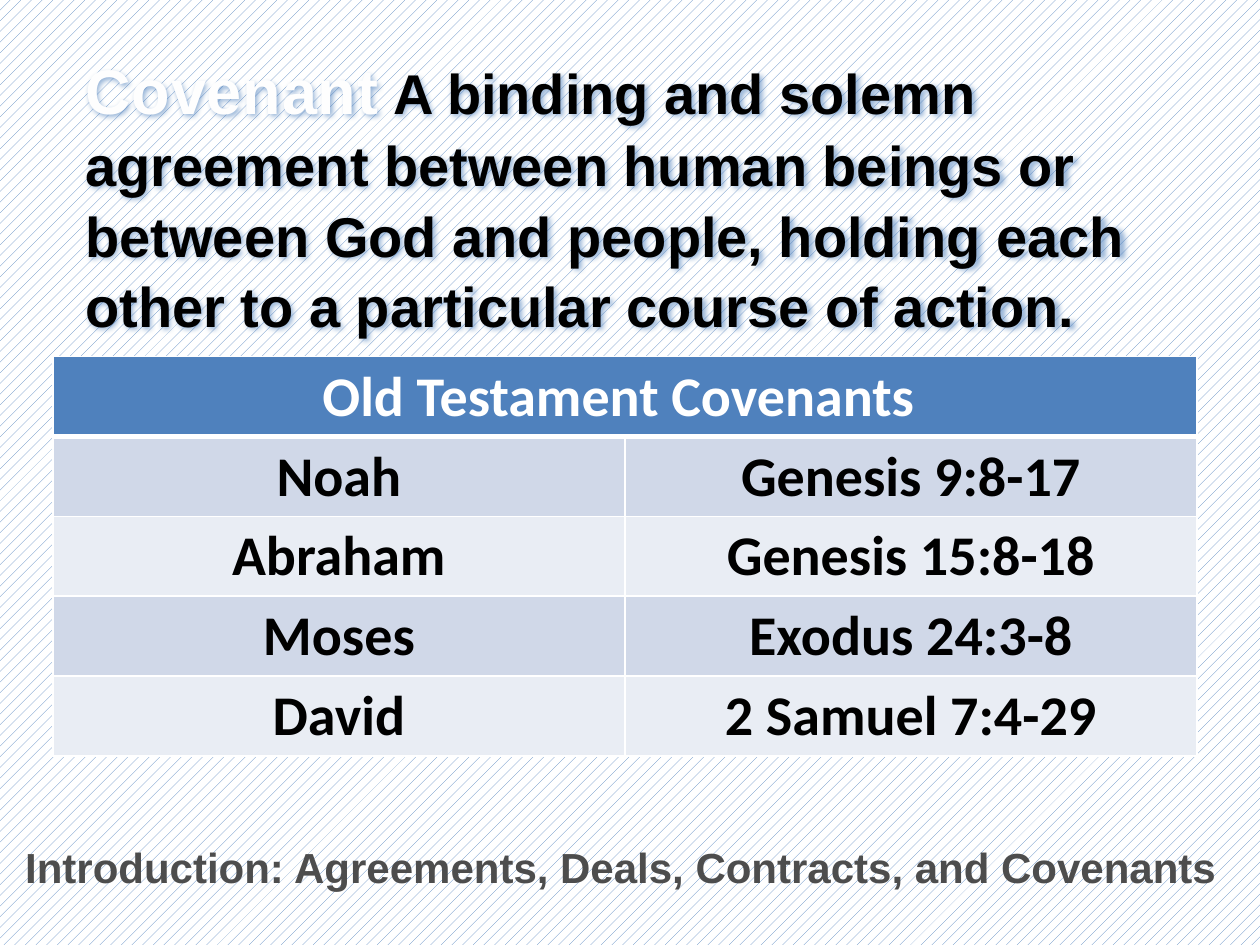
from lxml import etree
from pptx import Presentation
from pptx import util as u
from pptx.dml.color import RGBColor
from pptx.enum import dml, text
from pptx.oxml.ns import qn

BLUE = RGBColor(0x4F, 0x81, 0xBD)
WHITE = RGBColor(0xFF, 0xFF, 0xFF)
NEAR_WHITE = RGBColor(0xFE, 0xFE, 0xFE)
BLACK = RGBColor(0x00, 0x00, 0x00)
GREY = RGBColor(0x4D, 0x4D, 0x4D)
BAND_DARK = RGBColor(0xD0, 0xD8, 0xE8)
BAND_LIGHT = RGBColor(0xE9, 0xED, 0xF4)

COVENANTS = [
    ("Noah", "Genesis 9:8-17"),
    ("Abraham", "Genesis 15:8-18"),
    ("Moses", "Exodus 24:3-8"),
    ("David", "2 Samuel 7:4-29"),
]


def add_solid_fill(parent, color):
    fill = etree.SubElement(parent, qn("a:solidFill"))
    return etree.SubElement(fill, qn("a:srgbClr"), val=str(color))


def add_span(para, content, size=32, font="Arial", color=BLACK,
             outline=None, spacing=0):
    span = para.add_run()
    span.text = content
    span.font.size = u.Pt(size)
    span.font.name = font
    span.font.bold = True
    span.font.color.rgb = color
    props = span.font._element
    if spacing:
        props.set("spc", str(int(spacing * 100)))
    if outline is not None:
        line = etree.Element(qn("a:ln"), w=str(u.Pt(0.75)))
        add_solid_fill(line, outline)
        props.insert(0, line)


def add_box(page, left, top, width, height):
    box = page.shapes.add_textbox(*map(u.Inches, (left, top, width, height)))
    box.text_frame.word_wrap = True
    box.text_frame.auto_size = text.MSO_AUTO_SIZE.SHAPE_TO_FIT_TEXT
    return box


def add_text_shadow(box, color):
    effects = etree.SubElement(box._element.spPr, qn("a:effectLst"))
    shadow = etree.SubElement(effects, qn("a:outerShdw"), blurRad=str(u.Pt(3)),
                              dist=str(u.Pt(1.5)), dir="2700000", algn="tl")
    tone = etree.SubElement(shadow, qn("a:srgbClr"), val=str(color))
    etree.SubElement(tone, qn("a:alpha"), val="60000")


def set_borders(cell, bottom=1):
    props = cell._tc.get_or_add_tcPr()
    widths = {"a:lnL": 1, "a:lnR": 1, "a:lnT": 1, "a:lnB": bottom}
    for position, (tag, width) in enumerate(widths.items()):
        line = etree.Element(qn(tag), w=str(u.Pt(width)))
        add_solid_fill(line, WHITE)
        props.insert(position, line)


def fill_cell(cell, content, fill, color=BLACK):
    cell.fill.solid()
    cell.fill.fore_color.rgb = fill
    para = cell.text_frame.paragraphs[0]
    para.alignment = text.PP_ALIGN.CENTER
    add_span(para, content, font="Calibri", color=color)


def add_covenant_table(page):
    rows = len(COVENANTS) + 1
    table = page.shapes.add_table(rows, 2, u.Inches(0.42), u.Inches(2.83),
                                  u.Inches(9.08), u.Inches(3.17)).table
    # Header across both columns
    table.cell(0, 0).merge(table.cell(0, 1))
    fill_cell(table.cell(0, 0), "Old Testament Covenants ", BLUE, WHITE)
    for column in range(2):
        set_borders(table.cell(0, column), bottom=3)
    # Banded body rows
    for row, entry in enumerate(COVENANTS, start=1):
        band = BAND_DARK if row % 2 else BAND_LIGHT
        for column, content in enumerate(entry):
            fill_cell(table.cell(row, column), content, band)
            set_borders(table.cell(row, column))


def add_footer(page):
    box = add_box(page, 0, 6.58, 9.75, 0.81)
    box.text_frame.margin_top = u.Inches(0.1)
    para = box.text_frame.paragraphs[0]
    para.alignment = text.PP_ALIGN.RIGHT
    add_span(para, "Introduction: Agreements, Deals, Contracts, and Covenants",
             size=24, color=GREY, outline=WHITE)


def add_definition(page):
    box = add_box(page, 0.58, 0.33, 8.58, 2.32)
    add_text_shadow(box, BLUE)
    para = box.text_frame.paragraphs[0]
    para.line_spacing = 1.05
    add_span(para, "Covenant", size=36, color=NEAR_WHITE, outline=BLUE, spacing=0.5)
    add_span(para, " A binding and solemn agreement between human beings or "
             "between God and people, holding each other to a particular "
             "course of action.")


def main():
    deck = Presentation()
    deck.slide_width, deck.slide_height = u.Inches(10), u.Inches(7.5)
    page = deck.slides.add_slide(deck.slide_layouts[6])

    # Patterned background
    backdrop = page.background.fill
    backdrop.patterned()
    backdrop.pattern = dml.MSO_PATTERN.PERCENT_20
    backdrop.fore_color.rgb = BLUE
    backdrop.back_color.rgb = WHITE

    add_footer(page)
    add_definition(page)
    add_covenant_table(page)
    deck.save("out.pptx")


if __name__ == "__main__":
    main()
